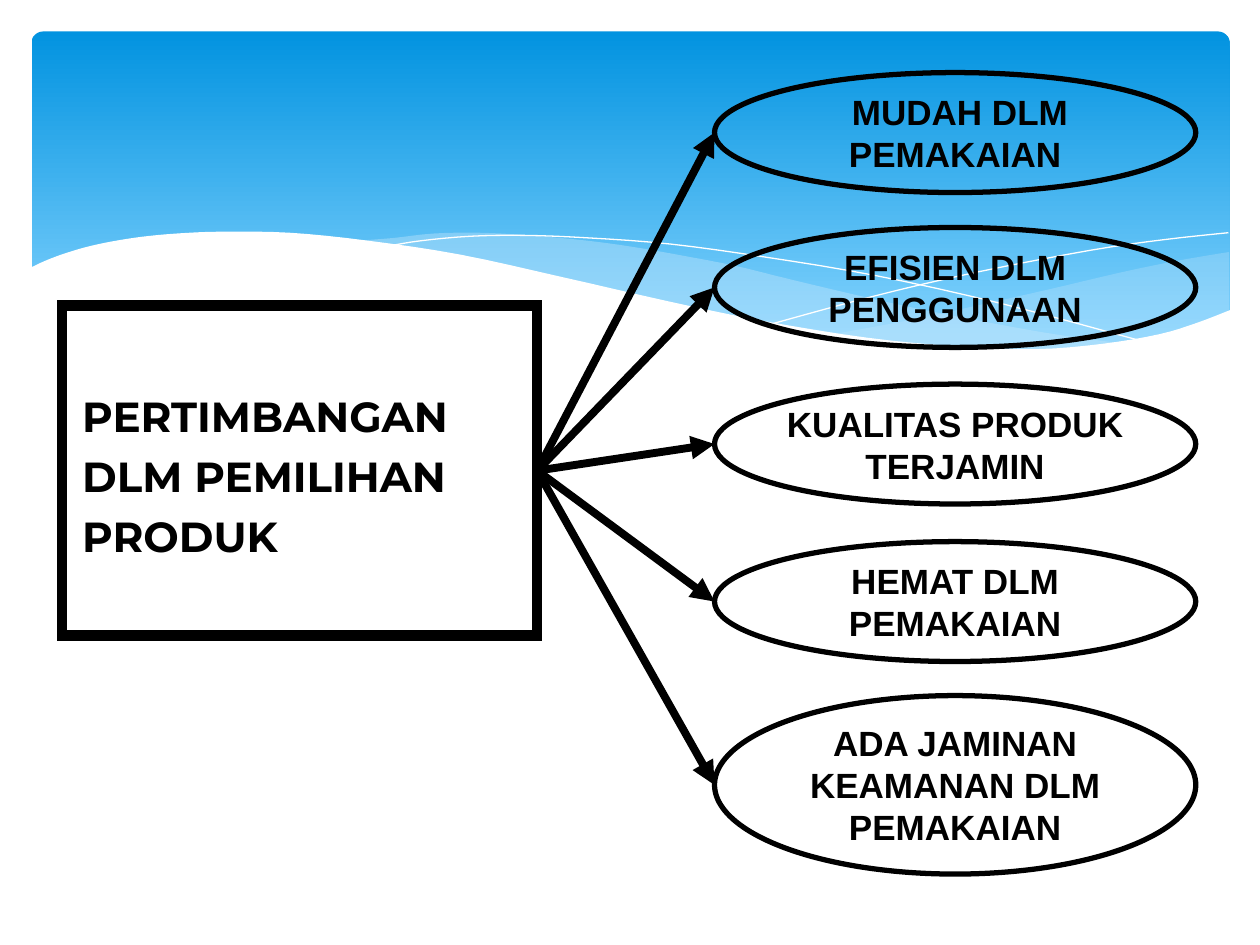
"""Build a slide that links product selection to its five considerations."""
from pptx import Presentation
from pptx import util as u
from pptx.dml import color
from pptx.enum import shapes, text
from pptx.oxml import ns, xmlchemy

BLACK, WHITE, PALE = "000000", "FFFFFF", "C6E7FC"
FRONT_WAVE = [
    (16.5, 153.5), (26, 149), (37.5, 144.7), (52, 140.5), (68.5, 137.2),
    (85.5, 134.8), (105, 133.2), (127.5, 132.4), (165.5, 133), (210, 137.5),
    (263, 145.5), (322, 158.5), (381, 172), (434, 183), (495.5, 193),
    (548, 198), (592.5, 199.5), (630, 196.5), (662.5, 191), (684, 184.5),
    (703.5, 177)]
MIDDLE_TOP = [
    (643, 196.5), (602.5, 191), (558, 183), (508.5, 173), (453, 160),
    (420.5, 152), (389.5, 146), (361, 141), (335, 137.5), (302.5, 134.5),
    (273.5, 133), (247.5, 133.5), (225, 136), (206, 137.5)]
MIDDLE_BOTTOM = [
    (206, 137.5), (246, 143), (291, 152), (353.5, 167), (407.5, 178.5),
    (456.5, 188), (500.5, 194.5), (538.5, 198.5), (573, 200),
    (610.5, 199.5), (643, 196.5)]
RIGHT_TOP = [
    (702.5, 144), (673, 149), (641.5, 155.5), (599, 165.5), (561, 174),
    (525, 182), (476, 191)]
RIGHT_BOTTOM = [
    (476, 191), (517.5, 196), (553.5, 199), (586, 200), (621.5, 198.5),
    (657.5, 192.5), (683.5, 185), (702.5, 178)]
LONG_LINE = [
    (222.5, 140.5), (241, 137.5), (269, 135), (299.5, 134.5), (337.5, 136),
    (383.5, 139.5), (438, 147), (500.5, 157.5), (572.5, 173.5), (653, 195)]
SHORT_LINE = [
    (441.5, 185), (500.5, 169), (558.5, 155.5), (623.5, 143), (665, 137),
    (702, 133)]
CONSIDERATIONS = [
    (" MUDAH DLM PEMAKAIAN", 41.5, 68.5),
    ("EFISIEN DLM PENGGUNAAN", 130, 68.5),
    ("KUALITAS PRODUK TERJAMIN", 219.5, 68.5),
    ("HEMAT DLM PEMAKAIAN", 309.5, 68.5),
    ("ADA JAMINAN KEAMANAN DLM PEMAKAIAN", 397.5, 102)]


def rgb(value):
    """Return the colour for a hex string."""
    return color.RGBColor.from_string(value)


def smooth(points, steps=4):
    """Return points along a Catmull-Rom curve through the given points."""
    padded = [points[0], *points, points[-1]]
    curve = [points[0]]
    for a, b, c, d in zip(padded, padded[1:], padded[2:], padded[3:]):
        for step in range(1, steps + 1):
            t = step / steps
            curve.append(tuple(
                (2 * q + (r - p) * t + (2 * p - 5 * q + 4 * r - s) * t ** 2
                 + (3 * q - p - 3 * r + s) * t ** 3) / 2
                for p, q, r, s in zip(a, b, c, d)))
    return curve


def set_line(shape, hex_color, width):
    """Give a shape or connector a solid line."""
    shape.line.color.rgb = rgb(hex_color)
    shape.line.width = u.Pt(width)


def add_line_detail(shape, tag, attribute, value):
    """Append a join or arrowhead element to the line of a shape."""
    detail = xmlchemy.OxmlElement(tag)
    detail.set(attribute, value)
    shape.line._get_or_add_ln().append(detail)


def add_outline(slide, points, closed):
    """Draw a freeform without a shadow."""
    start, *rest = [(u.Pt(x), u.Pt(y)) for x, y in points]
    builder = slide.shapes.build_freeform(*start)
    builder.add_line_segments(rest, close=closed)
    shape = builder.convert_to_shape()
    shape.shadow.inherit = False
    return shape


def add_wave(slide, points, hex_color, opacity=100):
    """Add a filled wave, optionally translucent."""
    shape = add_outline(slide, points, True)
    shape.fill.solid()
    shape.fill.fore_color.rgb = rgb(hex_color)
    shape.line.fill.background()
    if opacity < 100:
        fill_color = shape.fill._xPr.find(".//" + ns.qn("a:srgbClr"))
        alpha = xmlchemy.OxmlElement("a:alpha")
        alpha.set("val", str(opacity * 1000))
        fill_color.append(alpha)


def add_curve(slide, points):
    """Add a white hairline curve."""
    shape = add_outline(slide, smooth(points), False)
    shape.fill.background()
    set_line(shape, WHITE, 0)


def add_banner(slide):
    """Add the blue gradient banner."""
    banner = slide.shapes.add_shape(
        shapes.MSO_SHAPE.ROUNDED_RECTANGLE,
        u.Pt(18), u.Pt(18), u.Pt(684.7), u.Pt(194.5))
    banner.adjustments[0] = 0.034
    banner.shadow.inherit = False
    banner.line.fill.background()
    banner.fill.gradient()
    banner.fill.gradient_angle = 270
    stops = [(0, "0293E0"), (0.9, "83D3FE")]
    for stop, (position, hex_color) in zip(banner.fill.gradient_stops, stops):
        stop.position = position
        stop.color.rgb = rgb(hex_color)


def add_label(slide, kind, box, words, line_width, font, size, align, insets):
    """Add an unfilled outlined shape with bold text."""
    shape = slide.shapes.add_shape(kind, *[u.Pt(value) for value in box])
    shape.shadow.inherit = False
    shape.fill.background()
    set_line(shape, BLACK, line_width)
    frame = shape.text_frame
    frame.word_wrap = True
    frame.vertical_anchor = text.MSO_ANCHOR.MIDDLE
    (frame.margin_left, frame.margin_top,
     frame.margin_right, frame.margin_bottom) = [u.Pt(i) for i in insets]
    frame.text = words
    for paragraph in frame.paragraphs:
        paragraph.alignment = align
        for run in paragraph.runs:
            run.font.name = font
            run.font.size = u.Pt(size)
            run.font.bold = True
            run.font.color.rgb = rgb(BLACK)
    return shape


def add_arrow(slide, source, target):
    """Draw an arrow from the right of the box to the left of an ellipse."""
    arrow = slide.shapes.add_connector(
        shapes.MSO_CONNECTOR.STRAIGHT,
        source.left + source.width, source.top + source.height // 2,
        target.left, target.top + target.height // 2)
    set_line(arrow, BLACK, 4.5)
    add_line_detail(arrow, "a:tailEnd", "type", "triangle")
    arrow._element.spPr.append(xmlchemy.OxmlElement("a:effectLst"))


def main():
    """Build and save the slide."""
    presentation = Presentation()
    presentation.slide_width, presentation.slide_height = u.Pt(720), u.Pt(540)
    slide = presentation.slides.add_slide(presentation.slide_layouts[6])
    add_banner(slide)
    add_wave(slide, smooth(RIGHT_TOP) + smooth(RIGHT_BOTTOM), PALE, 29)
    add_wave(slide, smooth(MIDDLE_TOP) + smooth(MIDDLE_BOTTOM), PALE, 40)
    add_curve(slide, LONG_LINE)
    add_curve(slide, SHORT_LINE)
    add_wave(slide, smooth(FRONT_WAVE) + [(703.5, 237), (16.5, 237)], WHITE)
    topic = add_label(
        slide, shapes.MSO_SHAPE.RECTANGLE, (35.5, 174.7, 271.5, 188.5),
        "PERTIMBANGAN\nDLM PEMILIHAN\nPRODUK", 6, "Montserrat", 24,
        text.PP_ALIGN.LEFT, (11.5, 3, 6, 3))
    add_line_detail(topic, "a:miter", "lim", "800000")
    for paragraph in topic.text_frame.paragraphs:
        paragraph.line_spacing = 1.2
    ellipses = [
        add_label(slide, shapes.MSO_SHAPE.OVAL, (408.3, top, 275, height),
                  words, 3, "Arial", 20, text.PP_ALIGN.CENTER, (0, 0, 0, 0))
        for words, top, height in CONSIDERATIONS]
    for ellipse in ellipses:
        add_arrow(slide, topic, ellipse)
    presentation.save("out.pptx")


if __name__ == "__main__":
    main()
